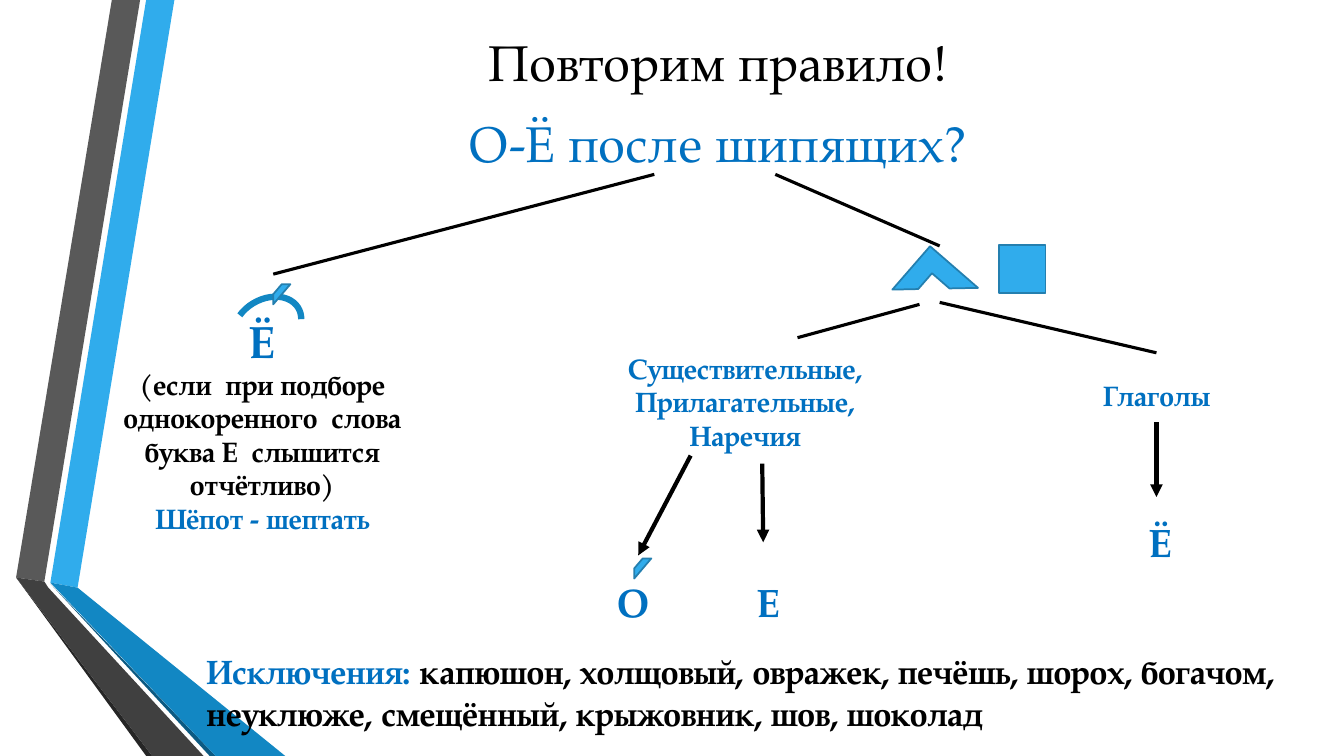
from pptx import Presentation
from pptx.dml.color import RGBColor
from pptx.enum.shapes import MSO_CONNECTOR, MSO_SHAPE as SHAPE
from pptx.enum.text import MSO_ANCHOR as ANCHOR, PP_ALIGN as ALIGN
from pptx.oxml.ns import qn
from pptx.util import Pt
from lxml.etree import SubElement

PX = 9144  # 100 px to the inch
FONT = "TeX Gyre Pagella"
COLORS = {
    "black": "000000", "blue": "0070C0", "sky": "30ACEC", "sea": "1287C3",
    "deep": "0C5A82", "outline": "247FAF", "gray": "595959",
    "dark gray": "404040", "charcoal": "262626",
}


def color(name):
    return RGBColor.from_string(COLORS[name])


def add_text(box, paragraphs, bold=True, align=ALIGN.CENTER, wrap=True):
    """Add a text box; each paragraph is (runs, size, line spacing), each run (text, colour)."""
    shape = slide.shapes.add_textbox(*[v * PX for v in box])
    frame = shape.text_frame
    frame.word_wrap = wrap
    frame.vertical_anchor = ANCHOR.MIDDLE if wrap else ANCHOR.TOP
    for i, (runs, size, spacing) in enumerate(paragraphs):
        paragraph = frame.paragraphs[0] if i == 0 else frame.add_paragraph()
        paragraph.alignment = align
        if spacing:
            paragraph.line_spacing = Pt(spacing)
        paragraph.font.name = FONT
        paragraph.font.size = Pt(size)
        paragraph.font.bold = bold
        for text, run_color in runs:
            run = paragraph.add_run()
            run.text = text
            run.font.name = FONT
            run.font.size = Pt(size)
            run.font.bold = bold
            run.font.color.rgb = color(run_color)
    return shape


prs = Presentation()
prs.slide_width, prs.slide_height = 1333 * PX, 750 * PX
slide = prs.slides.add_slide(prs.slide_layouts[6])

# Folded ribbons on the left
ribbons = [
    ("sky", [(50, 578), (77, 583), (173, 0), (145, 0)]),
    ("gray", [(139, 0), (111, 0), (16, 573), (44, 577)]),
    ("charcoal", [(16, 573), (145, 750), (151, 750)]),
    ("deep", [(50, 579), (208, 750), (214, 750)]),
    ("sea", [(50, 578), (214, 750), (283, 750), (77, 583)]),
    ("dark gray", [(202, 750), (48, 583), (44, 577), (16, 573), (151, 750)]),
]
for fill, points in ribbons:
    builder = slide.shapes.build_freeform(*points[0], scale=PX)
    builder.add_line_segments(points[1:], close=True)
    ribbon = builder.convert_to_shape()
    ribbon.shadow.inherit = False
    ribbon.fill.solid()
    ribbon.fill.fore_color.rgb = color(fill)
    ribbon.line.fill.background()

# Wording
add_text((164, 29, 1096, 63), [([("Повторим правило!", "black")], 36, None)], bold=False)
add_text((164, 110, 1096, 63), [([("О-Ё после шипящих?", "blue")], 36, None)], bold=False)
root_rule = add_text((102, 318, 338, 202), [
    ([("Ё", "blue")], 32, 41),
    ([("(если  при подборе однокоренного  слова буква Е  слышится отчётливо)", "black")], 20, 24),
    ([("Шёпот - шептать", "blue")], 20, 24),
])
root_letter = root_rule.text_frame.paragraphs[0]
root_letter._p.get_or_add_pPr().set("marR", str(22 * PX))

parts_of_speech = ["Существительные,", "Прилагательные,", "Наречия"]
add_text((570, 350, 338, 97), [([(part, "blue")], 20, 24) for part in parts_of_speech])
verbs = add_text((978, 366, 338, 53), [([("Глаголы", "blue")], 20, None)])
for letter, center in [("О", 628), ("Е", 762)]:
    add_text((center - 30, 551, 60, 93), [([(letter, "blue")], 28, None)])
add_text((1130, 509, 44, 57), [([("Ё", "blue")], 28, None)], align=ALIGN.LEFT, wrap=False)
add_text((195, 637, 1087, 97), [([
    ("Исключения: ", "blue"),
    ("капюшон, холщовый, овражек, печёшь, шорох, богачом, "
     "неуклюже, смещённый, крыжовник, шов, шоколад", "black"),
], 24, 30)], align=ALIGN.LEFT)

# Branches of the scheme
branches = [
    ((649, 173), (271, 272), False),
    ((769, 173), (932, 244), False),
    ((912, 302), (791, 335), False),
    ((932, 300), (1147, 350), False),
    ((685, 452), (633, 551), True),
    ((756, 460), (757, 538), True),
    ((1147, 419), (1147, 493), True),
]
for start, end, is_arrow in branches:
    branch = slide.shapes.add_connector(
        MSO_CONNECTOR.STRAIGHT, *[v * PX for v in start + end])
    branch.line.color.rgb = color("black")
    branch.line.width = Pt(3 if is_arrow else 2.25)
    if is_arrow:
        SubElement(branch.line._get_or_add_ln(), qn("a:tailEnd"), type="triangle")
    SubElement(branch._element.spPr, qn("a:effectLst"))
    if start == (1147, 419):
        branch.begin_connect(verbs, 2)

# Signs: suffix, ending, root, stress marks
signs = [
    (SHAPE.HALF_FRAME, (896, 258, 63, 57), 41),
    (SHAPE.RECTANGLE, (991, 243, 46, 48), 0),
    (SHAPE.ARC, (229, 297, 72, 54), 328.8),
    (SHAPE.DIAGONAL_STRIPE, (271, 282, 17, 20), 0),
    (SHAPE.DIAGONAL_STRIPE, (629, 554, 17, 20), 0),
]
for preset, box, rotation in signs:
    sign = slide.shapes.add_shape(preset, *[v * PX for v in box])
    sign.rotation = rotation
    sign.shadow.inherit = False
    if preset == SHAPE.ARC:
        sign.adjustments[0], sign.adjustments[1] = 140.16, 11.31
        sign.fill.background()
        sign.line.color.rgb = color("sea")
        sign.line.width = Pt(4.5)
    else:
        sign.fill.solid()
        sign.fill.fore_color.rgb = color("sky")
        sign.line.color.rgb = color("outline")
        sign.line.width = Pt(1.25)

prs.save("out.pptx")
